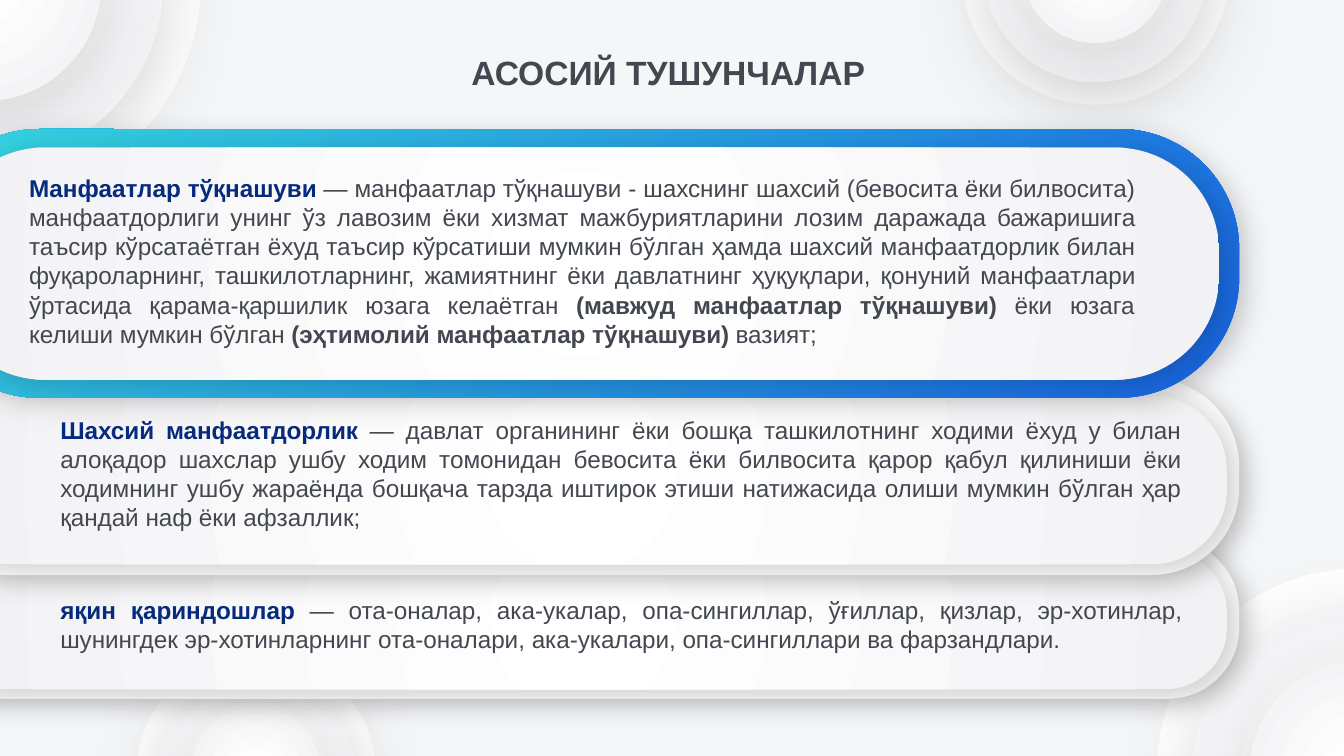
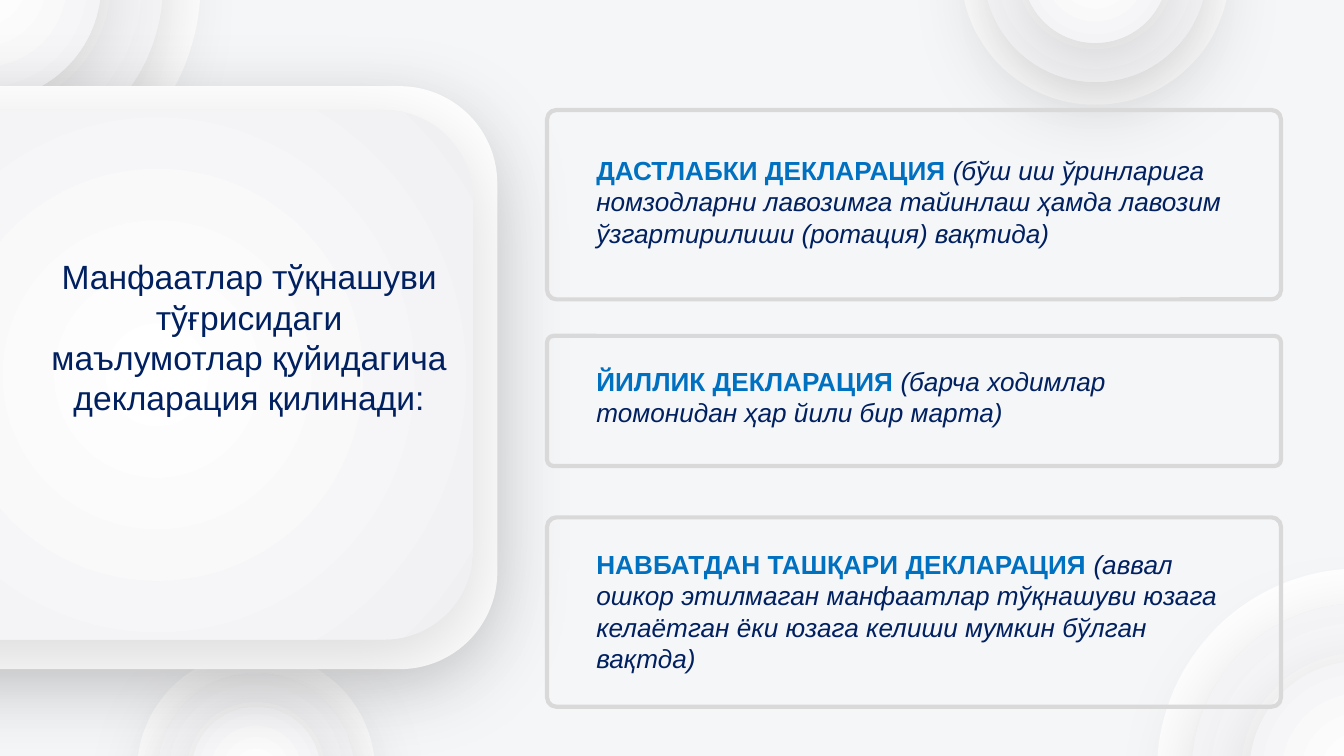
from dataclasses import dataclass

from pptx import Presentation
from pptx.dml.color import RGBColor
from pptx.enum.shapes import MSO_SHAPE
from pptx.enum.text import MSO_AUTO_SIZE, PP_ALIGN
from pptx.oxml import parse_xml
from pptx.oxml.ns import nsdecls, qn
from pptx.util import Cm, Pt


@dataclass(frozen=True)
class Theme:
    font: str = "Arial"
    title_size: int = 18
    declaration_size: int = 14
    definition_size: int = 13
    background: str = "F5F6F8"
    white: str = "FFFFFF"
    band: str = "FCFCFC"
    ink: str = "434750"
    term: str = "072B7C"
    navy: str = "002060"
    blue: str = "0070C0"
    frame: str = "D9D9D9"
    # Gradients: first colour, last colour, angle (None for radial)
    disc_glow: tuple = ("FFFFFF", "F0F0F3", None)
    band_glow: tuple = ("FFFFFF", "F2F2F4", None)
    accent: tuple = ("1863E0", "35D5DE", 135)
    # Shadows: opacity %, blur pt, distance pt, direction in degrees
    soft_shadow: tuple = (15, 45, 11.2, 85)
    band_shadow: tuple = (17, 14, 5, 40)


theme = Theme()


def add_panel(page, kind, area, fill, shadow=None, radius=None):
    """Add an outline-free shape; fill is a colour, a gradient or None."""
    panel = page.shapes.add_shape(kind, *[Cm(length) for length in area])
    if radius is not None:
        panel.adjustments[0] = radius
    panel.line.fill.background()
    panel.shadow.inherit = False
    properties = panel.element.spPr
    if fill is None:
        panel.fill.background()
    elif isinstance(fill, str):
        panel.fill.solid()
        panel.fill.fore_color.rgb = RGBColor.from_string(fill)
    else:
        *colors, angle = fill
        panel.fill.gradient()
        for stop, color in zip(panel.fill.gradient_stops, colors):
            stop.color.rgb = RGBColor.from_string(color)
        if angle is not None:
            panel.fill.gradient_angle = angle
        else:
            gradient = properties.find(qn("a:gradFill"))
            gradient.remove(gradient.find(qn("a:lin")))
            gradient.append(parse_xml(
                f'<a:path {nsdecls("a")} path="circle">'
                '<a:fillToRect l="50000" t="50000" r="50000" b="50000"/></a:path>'))
    if shadow:
        opacity, blur, distance, direction = shadow
        properties.find(qn("a:effectLst")).append(parse_xml(
            f'<a:outerShdw {nsdecls("a")} blurRad="{Pt(blur)}" dist="{Pt(distance)}" '
            f'dir="{direction * 60000}" algn="t" rotWithShape="0">'
            f'<a:srgbClr val="000000"><a:alpha val="{opacity * 1000}"/></a:srgbClr>'
            '</a:outerShdw>'))
    return panel


def add_text(page, area, size, spans, align=PP_ALIGN.LEFT):
    """Add one paragraph; each span is text, colour and letters b / i."""
    box = page.shapes.add_textbox(*[Cm(length) for length in area])
    box.text_frame.word_wrap = True
    box.text_frame.auto_size = MSO_AUTO_SIZE.SHAPE_TO_FIT_TEXT
    para = box.text_frame.paragraphs[0]
    para.alignment = align
    for text, color, style in spans:
        span = para.add_run()
        span.text = text
        span.font.name = theme.font
        span.font.size = Pt(size)
        span.font.bold = "b" in style
        span.font.italic = "i" in style
        span.font.color.rgb = RGBColor.from_string(color)


deck = Presentation()
deck.slide_width, deck.slide_height = Cm(25.4), Cm(14.29)
blank = deck.slide_layouts[6]
for placeholder in list(blank.placeholders):
    placeholder.element.getparent().remove(placeholder.element)

# Shared background and corner discs, kept on the blank layout
backdrop = deck.slide_master.background.fill
backdrop.solid()
backdrop.fore_color.rgb = RGBColor.from_string(theme.background)

concepts = deck.slides.add_slide(blank)
corner_discs = [
    (25.7, 14.58, (7.67, 6.35, 4.17)),
    (-0.3, -0.3, (8.18, 6.76, 4.42)),
    (4.84, 14.58, (4.5, 3.71, 2.44)),
    (20.7, -0.56, (5.08, 4.22, 2.74)),
]
for center_x, center_y, diameters in corner_discs:
    for ring, diameter in enumerate(diameters):
        area = (center_x - diameter / 2, center_y - diameter / 2, diameter, diameter)
        disc = add_panel(concepts, MSO_SHAPE.OVAL, area,
                         theme.disc_glow if ring else theme.white,
                         theme.soft_shadow if ring else None)
        blank.shapes.element.append(disc.element)

# Slide 1: stacked bands, the lowest first
bands = [
    ((-1.52, 10.19, 24.94, 3.02), (-1.19, 10.41, 24.38, 2.62), theme.band),
    ((-1.52, 7.16, 24.94, 3.71), (-1.19, 7.47, 24.38, 3.2), theme.band),
    ((-1.52, 2.44, 24.94, 5.08), (-1.12, 2.79, 24.16, 4.39), theme.accent),
]
for outer, inner, rim in bands:
    for area, fill in ((outer, rim), (inner, theme.band_glow)):
        add_panel(concepts, MSO_SHAPE.ROUNDED_RECTANGLE, area, fill,
                  theme.band_shadow, 0.446)

# Slide 1: title and definitions
add_text(concepts, (8.66, 0.86, 8.18, 1.02), theme.title_size,
         [("АСОСИЙ ТУШУНЧАЛАР", theme.ink, "b")])
definitions = [
    ((0.3, 3.15, 21.39, 3.58), "Манфаатлар тўқнашуви ", [
        ("— манфаатлар тўқнашуви - шахснинг шахсий (бевосита ёки билвосита) "
         "манфаатдорлиги унинг ўз лавозим ёки хизмат мажбуриятларини лозим даражада "
         "бажаришига таъсир кўрсатаётган ёхуд таъсир кўрсатиши мумкин бўлган ҳамда "
         "шахсий манфаатдорлик билан фуқароларнинг, ташкилотларнинг, жамиятнинг ёки "
         "давлатнинг ҳуқуқлари, қонуний манфаатлари ўртасида қарама-қаршилик юзага "
         "келаётган ", ""),
        ("(мавжуд манфаатлар тўқнашуви)", "b"),
        (" ёки юзага келиши мумкин бўлган ", ""),
        ("(эҳтимолий манфаатлар тўқнашуви)", "b"),
        (" вазият;", "")]),
    ((0.89, 7.72, 21.67, 2.49), "Шахсий манфаатдорлик ", [
        ("— давлат органининг ёки бошқа ташкилотнинг ходими ёхуд у билан алоқадор "
         "шахслар ушбу ходим томонидан бевосита ёки билвосита қарор қабул қилиниши "
         "ёки ходимнинг ушбу жараёнда бошқача тарзда иштирок этиши натижасида олиши "
         "мумкин бўлган ҳар қандай наф ёки афзаллик;", "")]),
    ((0.89, 11.13, 21.69, 1.37), "яқин қариндошлар ", [
        ("— ота-оналар, ака-укалар, опа-сингиллар, ўғиллар, қизлар, эр-хотинлар, "
         "шунингдек эр-хотинларнинг ота-оналари, ака-укалари, опа-сингиллари ва "
         "фарзандлари.", "")]),
]
for area, term, meaning in definitions:
    spans = [(term, theme.term, "b")]
    spans += [(text, theme.ink, style) for text, style in meaning]
    add_text(concepts, area, theme.definition_size, spans, PP_ALIGN.JUSTIFY)

# Slide 2: heading panel
declarations = deck.slides.add_slide(blank)
for area, fill in (((-3.48, 1.63, 12.88, 11.02), theme.white),
                   ((-3, 2.08, 11.94, 10.01), theme.disc_glow)):
    add_panel(declarations, MSO_SHAPE.ROUNDED_RECTANGLE, area, fill,
              theme.soft_shadow, 0.167)
add_text(declarations, (0.71, 4.72, 8, 4.11), theme.title_size,
         [("Манфаатлар тўқнашуви тўғрисидаги маълумотлар қуйидагича "
           "декларация қилинади:", theme.navy, "")], PP_ALIGN.CENTER)

# Slide 2: framed kinds of declaration (frame top and height, text top and height)
kinds = [
    (2.08, 3.58, 2.79, 2.06, "ДАСТЛАБКИ ДЕКЛАРАЦИЯ ",
     "(бўш иш ўринларига номзодларни лавозимга тайинлаш ҳамда лавозим "
     "ўзгартирилиши (ротация) вақтида)"),
    (6.35, 2.46, 6.78, 1.45, "ЙИЛЛИК ДЕКЛАРАЦИЯ ",
     "(барча ходимлар томонидан ҳар йили бир марта)"),
    (9.78, 3.58, 10.24, 2.64, "НАВБАТДАН ТАШҚАРИ ДЕКЛАРАЦИЯ ",
     "(аввал ошкор этилмаган манфаатлар тўқнашуви юзага келаётган ёки юзага "
     "келиши мумкин бўлган вақтда)"),
]
for top, height, text_top, text_height, name, detail in kinds:
    frame = add_panel(declarations, MSO_SHAPE.ROUNDED_RECTANGLE,
                      (10.34, top, 13.87, height), None, radius=0.049)
    frame.line.color.rgb = RGBColor.from_string(theme.frame)
    frame.line.width = Pt(2.25)
    add_text(declarations, (11.02, text_top, 12.7, text_height), theme.declaration_size,
             [(name, theme.blue, "b"), (detail, theme.navy, "i")])

deck.save("out.pptx")
